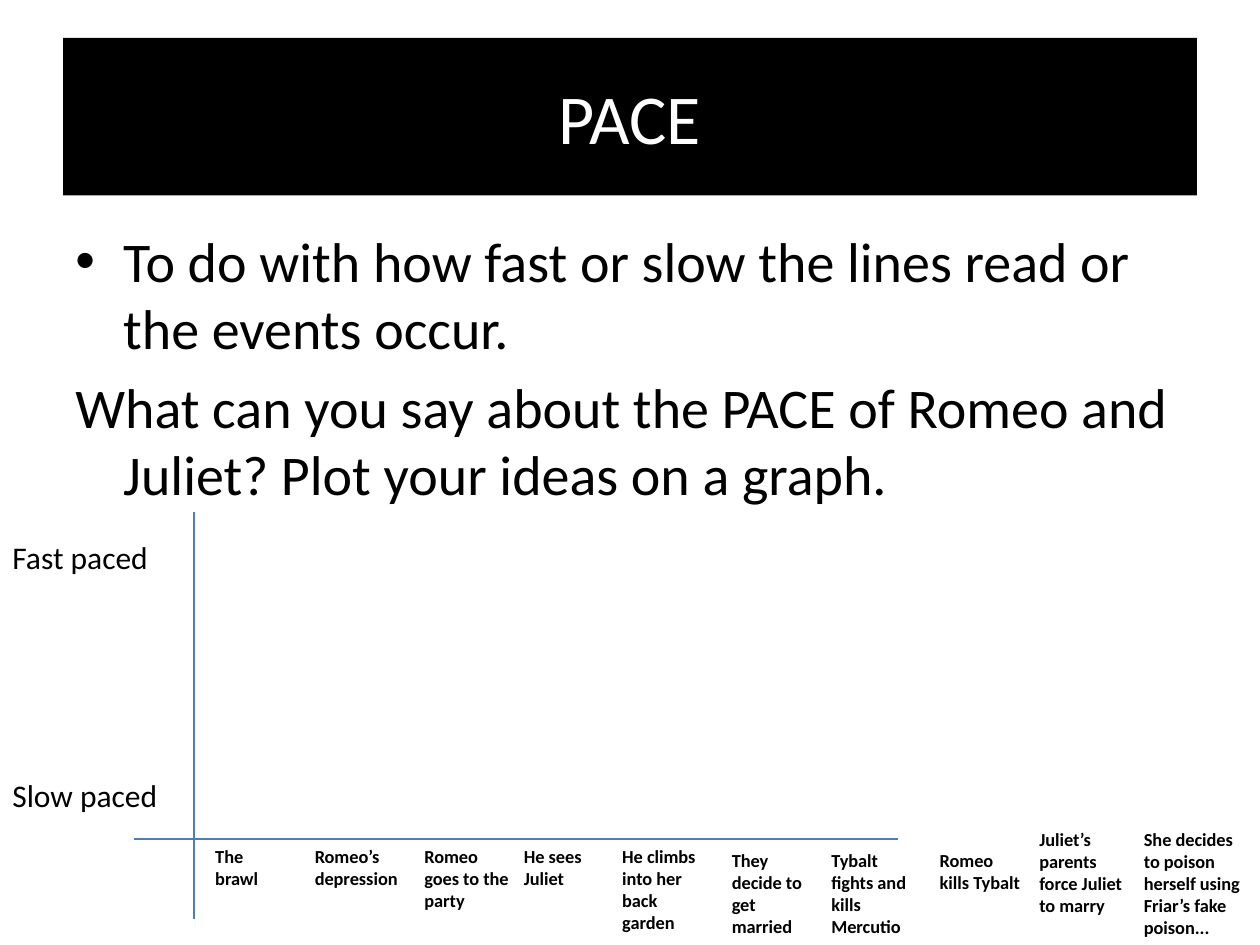
from dataclasses import dataclass

from lxml.etree import SubElement
from pptx import Presentation
from pptx.dml.color import RGBColor as Rgb
from pptx.enum.shapes import MSO_CONNECTOR as Link
from pptx.enum.text import MSO_ANCHOR as Anchor, MSO_AUTO_SIZE as Fit, PP_ALIGN as Align
from pptx.oxml.ns import qn
from pptx.slide import Slide
from pptx.util import Inches, Pt


@dataclass(frozen=True)
class Theme:
    font: str = "Calibri"
    ink: Rgb = Rgb(0, 0, 0)
    paper: Rgb = Rgb(255, 255, 255)
    axis: Rgb = Rgb(0x4B, 0x7E, 0xBC)
    title: float = 40
    body: float = 32
    label: float = 18
    event: float = 10.5
    line: float = 0.75


@dataclass(frozen=True)
class Label:
    text: str
    left: float
    top: float
    width: float = 0.87
    height: float = 0.45


@dataclass(frozen=True)
class Axis:
    x1: float
    y1: float
    x2: float
    y2: float


THEME = Theme()
BODY = (
    ("To do with how fast or slow the lines read or the events occur.", True),
    ("What can you say about the PACE of Romeo and Juliet? "
     "Plot your ideas on a graph.", False),
)
AXES = (Axis(1.54, 4.06, 1.54, 7.29), Axis(1.06, 6.66, 7.13, 6.66))
LEVELS = (
    Label("Slow paced", 0, 6.11, 1.46, 0.4),
    Label("Fast paced", 0, 4.22, 1.46, 0.4),
)
EVENTS = (
    Label("The brawl", 1.61, 6.66, 0.79),
    Label("Romeo’s depression", 2.4, 6.66),
    Label("Romeo goes to the party", 3.27, 6.66, height=0.63),
    Label("He sees Juliet", 4.06, 6.66),
    Label("He climbs into her back garden", 4.84, 6.66, height=0.81),
    Label("They decide to get married", 5.71, 6.69, height=0.81),
    Label("Tybalt fights and kills Mercutio", 6.5, 6.69, height=0.81),
    Label("Romeo kills Tybalt", 7.36, 6.69),
    Label("Juliet’s parents force Juliet to marry", 8.15, 6.52, height=0.98),
    Label("She decides to poison herself using Friar’s fake poison...",
          8.98, 6.52, 1.02, 0.98),
)


def style(run, size: float, color: Rgb = THEME.ink, bold: bool = False) -> None:
    form = {"name": THEME.font, "size": Pt(size), "bold": bold}
    for key, value in form.items():
        setattr(run.font, key, value)
    run.font.color.rgb = color


def add_title(slide: Slide, text: str) -> None:
    title = slide.shapes.title
    place = {"left": 0.5, "top": 0.3, "width": 9, "height": 1.25}
    for key, value in place.items():
        setattr(title, key, Inches(value))
    title.fill.solid()
    title.fill.fore_color.rgb = THEME.ink
    title.text_frame.vertical_anchor = Anchor.MIDDLE
    para = title.text_frame.paragraphs[0]
    para.alignment = Align.CENTER
    run = para.add_run()
    run.text = text
    style(run, THEME.title, THEME.paper)


def hang(para, bullet: bool) -> None:
    """Give the paragraph a hanging indent, with or without a bullet."""
    props = para._p.get_or_add_pPr()
    props.set("marL", str(Inches(0.38)))
    props.set("indent", str(Inches(-0.38)))
    if bullet:
        SubElement(props, qn("a:buFont")).set("typeface", "Arial")
        SubElement(props, qn("a:buChar")).set("char", "•")
    else:
        SubElement(props, qn("a:buNone"))


def add_body(slide: Slide) -> None:
    box = slide.shapes.add_textbox(Inches(0.5), Inches(1.75), Inches(9), Inches(4.95))
    frame = box.text_frame
    frame.word_wrap = True
    for i, (text, bullet) in enumerate(BODY):
        para = frame.add_paragraph() if i else frame.paragraphs[0]
        para.space_before = Pt(THEME.body * 0.2)
        hang(para, bullet)
        run = para.add_run()
        run.text = text
        style(run, THEME.body)


def add_axis(slide: Slide, axis: Axis) -> None:
    ends = map(Inches, (axis.x1, axis.y1, axis.x2, axis.y2))
    line = slide.shapes.add_connector(Link.STRAIGHT, *ends)
    line.line.color.rgb = THEME.axis
    line.line.width = Pt(THEME.line)
    SubElement(line._element.spPr, qn("a:effectLst"))


def add_label(slide: Slide, label: Label, size: float, bold: bool = False) -> None:
    place = map(Inches, (label.left, label.top, label.width, label.height))
    frame = slide.shapes.add_textbox(*place).text_frame
    frame.word_wrap = True
    frame.auto_size = Fit.SHAPE_TO_FIT_TEXT
    run = frame.paragraphs[0].add_run()
    run.text = label.text
    style(run, size, bold=bold)


def main() -> None:
    deck = Presentation()
    deck.slide_width, deck.slide_height = Inches(10), Inches(7.5)
    slide = deck.slides.add_slide(deck.slide_layouts[5])
    add_title(slide, "PACE")
    add_body(slide)
    for axis in AXES:
        add_axis(slide, axis)
    for level in LEVELS:
        add_label(slide, level, THEME.label)
    for event in EVENTS:
        add_label(slide, event, THEME.event, bold=True)
    deck.save("out.pptx")


if __name__ == "__main__":
    main()
